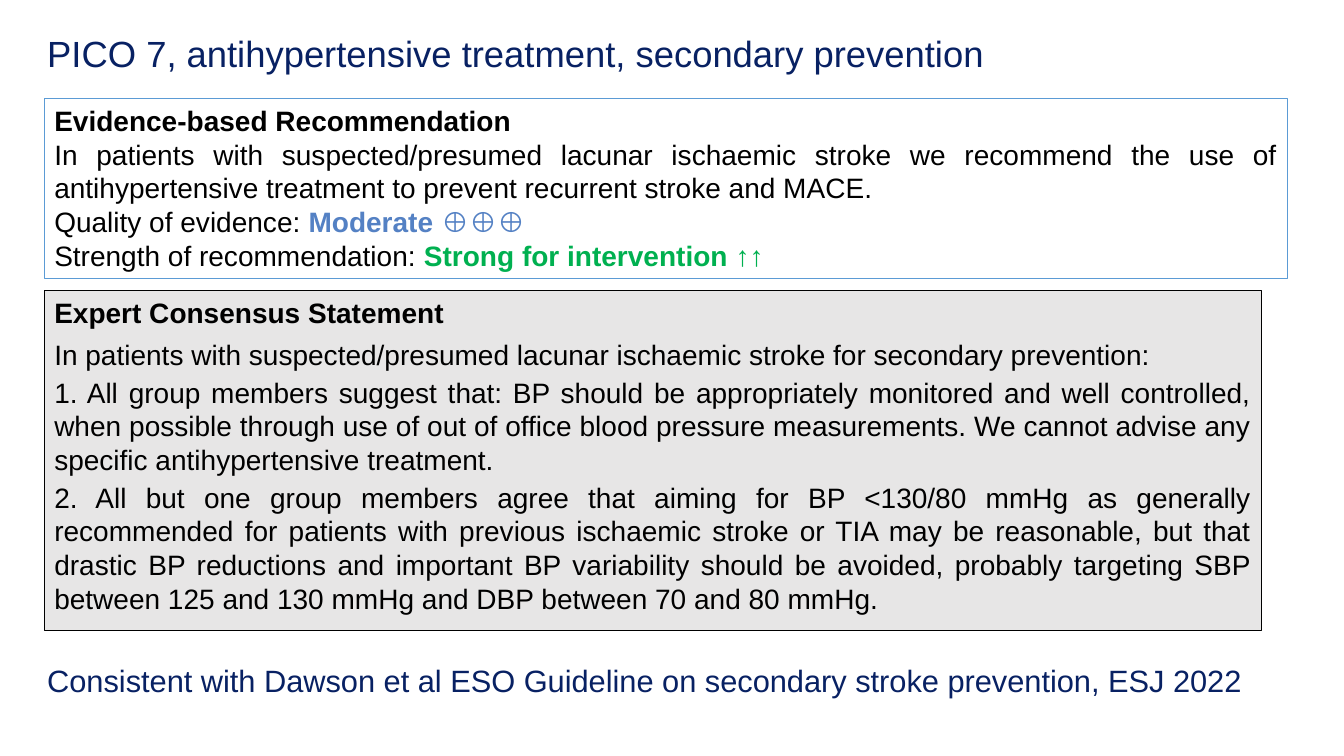
from pptx import Presentation
from pptx import util as u
from pptx.dml import color
from pptx.enum import shapes, text

NAVY, BLACK, BLUE, GREEN = "082163", "000000", "5481C4", "00B050"
LEFT, JUSTIFY = text.PP_ALIGN.LEFT, text.PP_ALIGN.JUSTIFY


def rgb(value):
    return color.RGBColor.from_string(value)


class SlideBuilder:
    """Holds the current slide and the text style shared by its boxes."""

    font_name = "Arial"

    def __init__(self, slide):
        self.slide = slide

    def add_paragraphs(self, shape, paragraphs, size, anchor=text.MSO_ANCHOR.TOP,
                       line_spacing=1.0):
        """Each paragraph is (alignment, points after, [(text, colour, bold), ...])."""
        frame = shape.text_frame
        frame.word_wrap = True
        frame.vertical_anchor = anchor
        for index, (alignment, space_after, runs) in enumerate(paragraphs):
            paragraph = frame.add_paragraph() if index else frame.paragraphs[0]
            paragraph.alignment = alignment
            paragraph.line_spacing = line_spacing
            paragraph.space_after = u.Pt(space_after)
            for words, colour, bold in runs:
                run = paragraph.add_run()
                run.text = words
                run.font.name = self.font_name
                run.font.size = u.Pt(size)
                run.font.bold = bold
                run.font.color.rgb = rgb(colour)

    def heading(self, place, words, size, **layout):
        shape = self.slide.shapes.add_textbox(*map(u.Inches, place))
        self.add_paragraphs(shape, [(LEFT, 0, [(words, NAVY, False)])], size, **layout)

    def panel(self, place, line, paragraphs, fill=None):
        shape = self.slide.shapes.add_shape(
            shapes.MSO_SHAPE.RECTANGLE, *map(u.Inches, place))
        shape.shadow.inherit = False
        if fill:
            shape.fill.solid()
            shape.fill.fore_color.rgb = rgb(fill)
        else:
            shape.fill.background()
        shape.line.color.rgb = rgb(line)
        shape.line.width = u.Pt(0.75)
        self.add_paragraphs(shape, paragraphs, 20)


def main():
    presentation = Presentation()
    presentation.slide_width = u.Inches(13.33)
    presentation.slide_height = u.Inches(7.5)
    builder = SlideBuilder(presentation.slides.add_slide(presentation.slide_layouts[6]))

    builder.heading((0.37, 0.14, 12.31, 0.82),
                    "PICO 7, antihypertensive treatment, secondary prevention",
                    26, anchor=text.MSO_ANCHOR.MIDDLE, line_spacing=0.9)

    builder.panel((0.44, 0.98, 12.33, 1.78), "5B9BD5", [
        (LEFT, 0, [("Evidence-based Recommendation", BLACK, True)]),
        (JUSTIFY, 0, [("In patients with suspected/presumed lacunar ischaemic stroke we "
                       "recommend the use of antihypertensive treatment to prevent "
                       "recurrent stroke and MACE.", BLACK, False)]),
        (JUSTIFY, 0, [("Quality of evidence: ", BLACK, False),
                      ("Moderate ⊕⊕⊕", BLUE, True)]),
        (JUSTIFY, 0, [("Strength of recommendation: ", BLACK, False),
                      ("Strong for intervention", GREEN, True),
                      (" ↑↑", GREEN, False)]),
    ])

    builder.panel((0.44, 2.88, 12.07, 3.38), BLACK, [
        (LEFT, 6, [("Expert Consensus Statement", BLACK, True)]),
        (LEFT, 3, [("In patients with suspected/presumed lacunar ischaemic stroke for "
                    "secondary prevention:", BLACK, False)]),
        (JUSTIFY, 3, [("1. All group members suggest that: BP should be appropriately "
                       "monitored and well controlled, when possible through use of out of "
                       "office blood pressure measurements. We cannot advise any specific "
                       "antihypertensive treatment.", BLACK, False)]),
        (JUSTIFY, 6, [("2. All but one group members agree that aiming for BP <130/80 mmHg "
                       "as generally recommended for patients with previous ischaemic "
                       "stroke or TIA may be reasonable, but that drastic BP reductions and "
                       "important BP variability should be avoided, probably targeting SBP "
                       "between 125 and 130 mmHg and DBP between 70 and 80 mmHg.",
                       BLACK, False)]),
    ], fill="E7E6E6")

    builder.heading((0.37, 6.52, 12.2, 0.47),
                    "Consistent with Dawson et al ESO Guideline on secondary stroke "
                    "prevention, ESJ 2022", 22)

    presentation.save("out.pptx")


if __name__ == "__main__":
    main()
